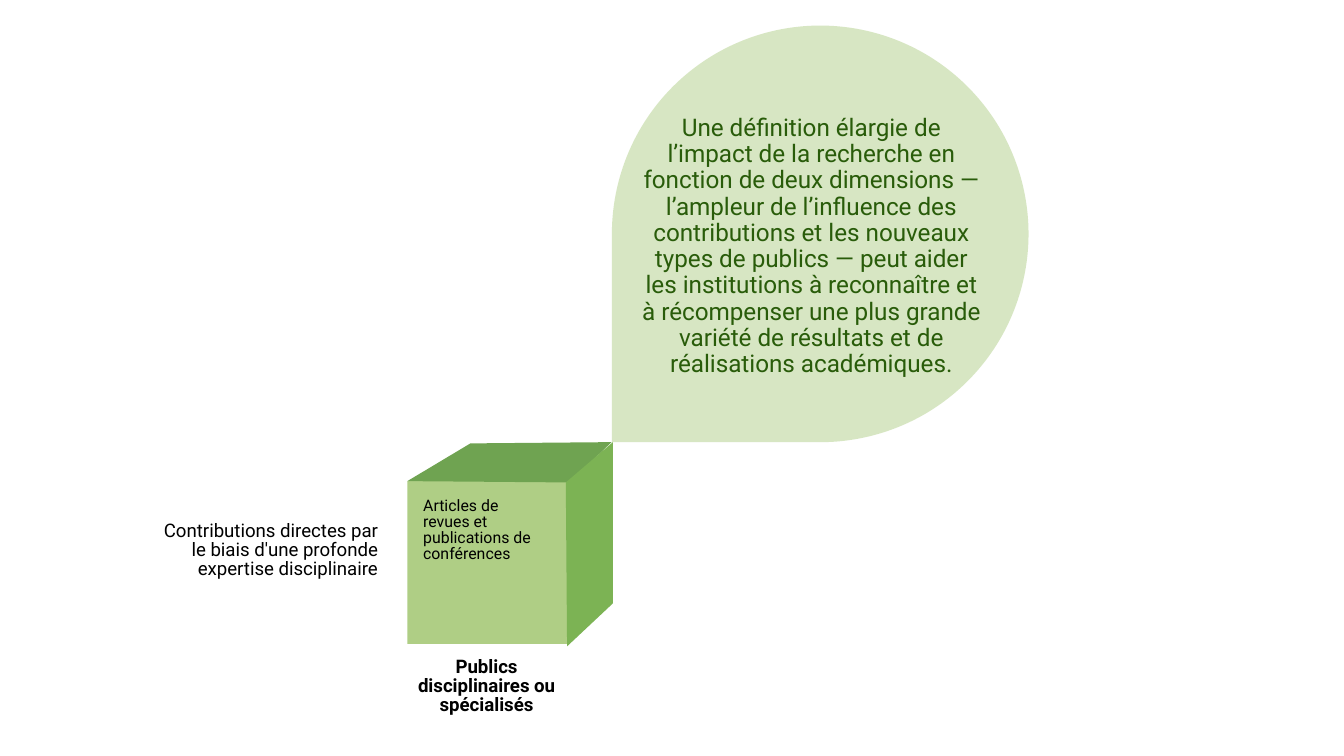
from lxml import etree
from pptx import Presentation
from pptx.dml.color import RGBColor
from pptx.enum.shapes import MSO_SHAPE
from pptx.enum.text import MSO_ANCHOR, PP_ALIGN
from pptx.oxml.ns import qn
from pptx.util import Pt

RECTANGLE = MSO_SHAPE.RECTANGLE
TEARDROP = MSO_SHAPE.TEAR
TOP = MSO_ANCHOR.TOP
LEFT, CENTER, RIGHT = PP_ALIGN.LEFT, PP_ALIGN.CENTER, PP_ALIGN.RIGHT

BLACK = RGBColor(0x00, 0x00, 0x00)
DARK_GREEN = RGBColor(0x29, 0x5C, 0x0A)
FRONT_GREEN = RGBColor(0xAF, 0xCE, 0x85)
TOP_GREEN = RGBColor(0x6F, 0xA3, 0x51)
SIDE_GREEN = RGBColor(0x7C, 0xB3, 0x54)

FONT = "Roboto"
BLANK_LAYOUT = 6

TOP_FACE = [(218.2, 257.8), (305.3, 258.5), (327.6, 236.9), (252, 237.6)]
SIDE_FACE = [(303.8, 346.3), (303.1, 258.5), (328.3, 236.9), (328.3, 323.3)]

DEFINITION = (
    "Une définition élargie de l’impact de la recherche en fonction de deux "
    "dimensions — l’ampleur de l’influence des contributions et les nouveaux "
    "types de publics — peut aider les institutions à reconnaître et à "
    "récompenser une plus grande variété de résultats et de réalisations "
    "académiques."
)


def set_values(target, values):
    for name, value in values.items():
        setattr(target, name, value)


def paint(shape, color):
    shape.shadow.inherit = False
    shape.fill.solid()
    shape.fill.fore_color.rgb = color
    shape.line.fill.background()


def set_opacity(shape, percent):
    color = shape.fill._xPr.find(qn("a:solidFill"))[0]
    alpha = etree.SubElement(color, qn("a:alpha"))
    alpha.set("val", str(percent * 1000))


def add_preset(page, kind, bounds, color):
    shape = page.shapes.add_shape(kind, *map(Pt, bounds))
    paint(shape, color)
    return shape


def add_face(page, corners, color):
    points = [(Pt(x), Pt(y)) for x, y in corners]
    builder = page.shapes.build_freeform(*points[0], scale=1.0)
    builder.add_line_segments(points[1:], close=True)
    paint(builder.convert_to_shape(), color)


def add_text(page, text, bounds, para_format, size, color=BLACK, bold=False):
    box = page.shapes.add_textbox(*map(Pt, bounds))
    set_values(box.text_frame, {"word_wrap": True, "vertical_anchor": TOP})
    para = box.text_frame.paragraphs[0]
    set_values(para, para_format)
    span = para.add_run()
    span.text = text
    set_values(span.font, {"name": FONT, "size": Pt(size), "bold": bold})
    span.font.color.rgb = color


def paragraph_format(alignment, line_spacing=0.85, space_after=6):
    return {
        "alignment": alignment,
        "line_spacing": line_spacing,
        "space_after": Pt(space_after),
    }


def add_cube(page):
    add_preset(page, RECTANGLE, (218.2, 257.8, 85.7, 87.1), FRONT_GREEN)
    add_face(page, TOP_FACE, TOP_GREEN)
    add_face(page, SIDE_FACE, SIDE_GREEN)


def add_callout(page):
    drop = add_preset(page, TEARDROP, (327.8, 13.7, 223.2, 223.2), FRONT_GREEN)
    drop.rotation = 180
    set_opacity(drop, 49)
    add_text(page, DEFINITION, (334.1, 58.3, 200.9, 140.4),
             paragraph_format(CENTER, line_spacing=0.9), 13, DARK_GREEN)


def main():
    deck = Presentation()
    set_values(deck, {"slide_width": Pt(720), "slide_height": Pt(405)})
    page = deck.slides.add_slide(deck.slide_layouts[BLANK_LAYOUT])

    add_text(page, "Contributions directes par le biais d'une profonde "
             "expertise disciplinaire", (80.6, 276.5, 128.9, 41),
             paragraph_format(RIGHT), 10)
    add_text(page, "Publics disciplinaires ou spécialisés",
             (208.1, 349.2, 105.1, 41), paragraph_format(CENTER), 10, bold=True)
    add_cube(page)
    add_callout(page)
    add_text(page, "Articles de revues et publications de conférences",
             (219.6, 263.5, 75.6, 41), paragraph_format(LEFT, space_after=4), 8.5)

    deck.save("out.pptx")


if __name__ == "__main__":
    main()
